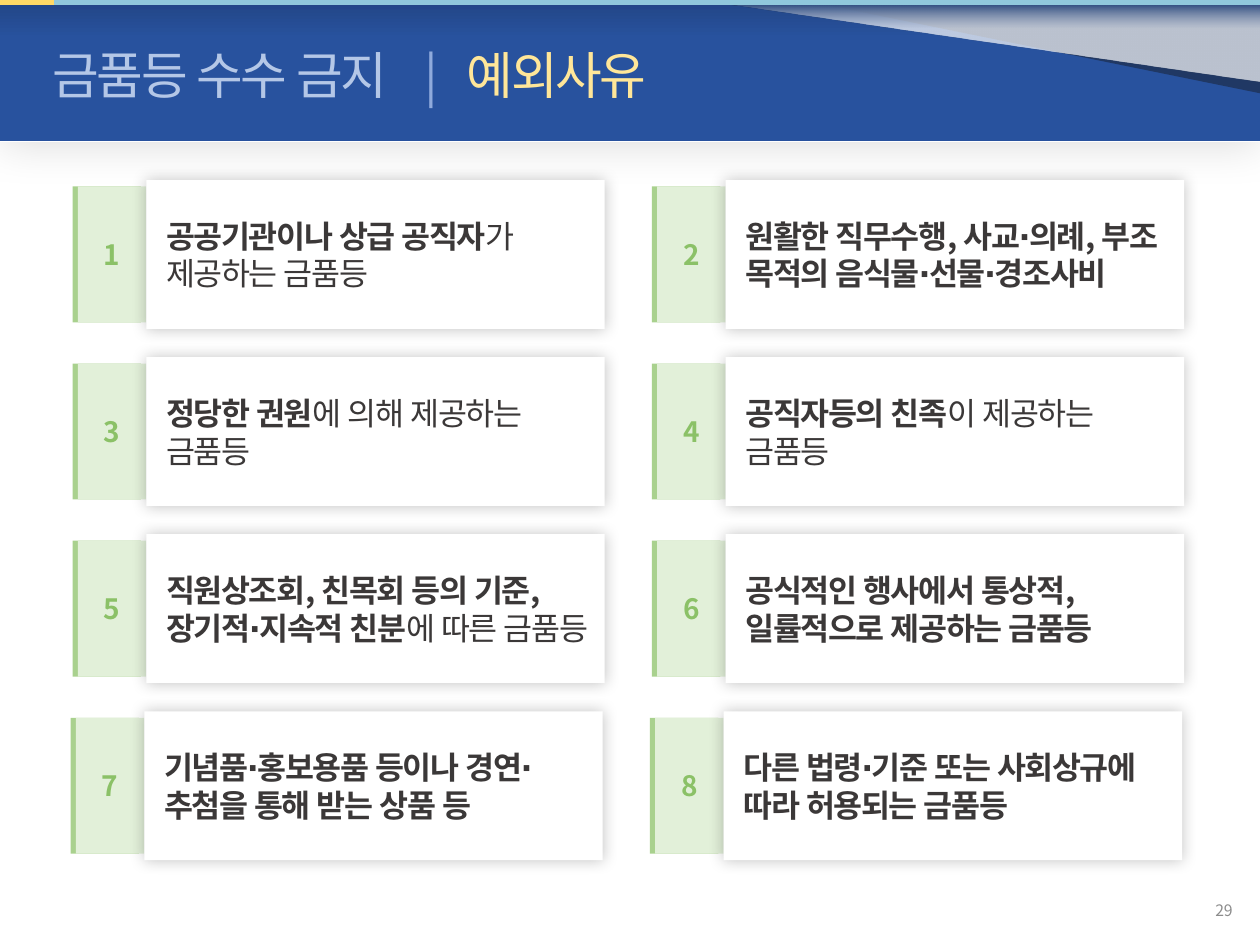
from lxml.etree import SubElement
from pptx import Presentation
from pptx.dml.color import RGBColor
from pptx.enum.shapes import MSO_CONNECTOR, MSO_SHAPE
from pptx.enum.text import MSO_ANCHOR, MSO_AUTO_SIZE, PP_ALIGN
from pptx.oxml.ns import qn
from pptx.util import Cm, Pt

# Content: each reason is a list of (text, bold) runs; \v is a line break
TITLE = [("금품등 수수 금지", "title"), ("\t|", "divider"), ("\t예외사유", "accent")]
REASONS = [
    [("공공기관이나 상급 공직자", True), ("가\v제공하는 금품등", False)],
    [("원활한 직무수행, 사교∙의례, 부조 목적의 음식물∙선물∙경조사비", True)],
    [("정당한 권원", True), ("에 의해 제공하는\v금품등", False)],
    [("공직자등의 친족", True), ("이 제공하는\v금품등", False)],
    [("직원상조회, 친목회 등의 기준, 장기적∙지속적 친분", True), ("에 따른 금품등", False)],
    [("공식적인 행사에서 통상적, 일률적으로 제공하는 금품등", True)],
    [("기념품∙홍보용품 등이나 경연∙추첨을 통해 받는 상품 등", True)],
    [("다른 법령∙기준 또는 사회상규에 따라 허용되는 금품등", True)],
]
PAGE = "29"

FONT = "Noto Sans CJK KR"
COLORS = {
    "white": "FFFFFF", "black": "000000", "text": "3B3838", "page": "8C8C8C",
    "tag": "E2F0D9", "tag_edge": "A9D18E", "number": "8BC167",
    "band_top": "224585", "band": "28529E", "fold": "203864", "fold_edge": "27457B",
    "strip": "90C8DC", "strip_start": "FFD966",
    "title": "B4C7E7", "divider": "8FAADC", "accent": "FFE699",
}
W, H = 25.4, 19.05
COLS = 2
LEFT, TOP = 1.57, 3.63               # first tag's left, first card's top
COL_STEP, ROW_STEP = 11.68, 3.57
TAG_W, TAG_H = 1.38, 2.74
CARD_W, CARD_H = 9.24, 3.0
LAST_ROW_SHIFT = -0.04


def rgb(name):
    return RGBColor.from_string(COLORS[name])


def add_run(p, text, size, color, bold=False, spacing=0):
    r = p.add_run()
    r.text = text
    f = r.font
    f.size, f.bold, f.name = Pt(size), bold, FONT
    f.color.rgb = rgb(color)
    rPr = r._r.get_or_add_rPr()
    rPr.set("lang", "ko-KR")
    if spacing:
        rPr.set("spc", str(round(spacing * 100)))
    SubElement(rPr, qn("a:ea")).set("typeface", FONT)


def add_box(s, x, y, w, h, fill=None, kind=MSO_SHAPE.RECTANGLE):
    sp = s.shapes.add_shape(kind, Cm(x), Cm(y), Cm(w), Cm(h))
    sp.shadow.inherit = False
    sp.line.fill.background()
    if fill:
        sp.fill.solid()
        sp.fill.fore_color.rgb = rgb(fill)
    return sp


def set_gradient(sp, *stops):
    """Fill from top to bottom with two (position, colour, alpha) stops."""
    sp.fill.gradient()
    sp.fill.gradient_angle = 270
    for stop, (pos, color, alpha) in zip(sp.fill.gradient_stops, stops):
        stop.position = pos
        stop.color.rgb = rgb(color)
        if alpha < 100:
            clr = stop._gs.find(qn("a:srgbClr"))
            SubElement(clr, qn("a:alpha")).set("val", str(alpha * 1000))


def set_shadow(sp, color, alpha, blur, dist, angle):
    effects = sp._element.spPr.find(qn("a:effectLst"))
    shadow = SubElement(effects, qn("a:outerShdw"), blurRad=str(Pt(blur)),
                        dist=str(Pt(dist)), dir=str(angle * 60000),
                        algn="ctr", rotWithShape="0")
    clr = SubElement(shadow, qn("a:srgbClr"), val=COLORS[color])
    SubElement(clr, qn("a:alpha")).set("val", str(alpha * 1000))


def set_frame(sp, left, right, align):
    tf = sp.text_frame
    tf.word_wrap = True
    tf.vertical_anchor = MSO_ANCHOR.MIDDLE
    tf.margin_left, tf.margin_right = Cm(left), Cm(right)
    p = tf.paragraphs[0]
    p.alignment = align
    return p


def add_header(s):
    band = add_box(s, 0, 0, W, 2.84)
    set_gradient(band, (0, "band_top", 100), (0.27, "band", 100))
    set_shadow(band, "black", 13, 25, 3, 90)

    # Title, raised above the band
    sp = s.shapes.title
    sp.left, sp.top, sp.width, sp.height = Cm(0.81), Cm(0.76), Cm(22.68), Cm(1.5)
    s.shapes._spTree.append(sp._element)
    tf = sp.text_frame
    tf.auto_size = MSO_AUTO_SIZE.NONE
    tf.vertical_anchor = MSO_ANCHOR.TOP
    p = tf.paragraphs[0]
    p.alignment = PP_ALIGN.LEFT
    tabs = SubElement(p._p.get_or_add_pPr(), qn("a:tabLst"))
    for pos in (7.5, 8.35):
        SubElement(tabs, qn("a:tab"), pos=str(Cm(pos)), algn="l")
    for text, color in TITLE:
        add_run(p, text, 29, color, spacing=-1.5)

    # Folded corner
    folds = [add_box(s, W - w, 0.08, w, h, "fold", MSO_SHAPE.RIGHT_TRIANGLE)
             for w, h in ((8.84, 1.8), (10.85, 1.57))]
    for sp in folds:
        sp.rotation = 180
    set_gradient(folds[1], (0.68, "white", 69), (1, "fold_edge", 100))

    # Lower rule and top strip
    rule = s.shapes.add_connector(MSO_CONNECTOR.STRAIGHT, 0, Cm(2.86), Cm(W), Cm(2.86))
    rule.line.color.rgb = rgb("white")
    rule.line.width = Pt(0.5)
    SubElement(rule._element.spPr, qn("a:effectLst"))
    add_box(s, 0, 0, W, 0.1, "strip")
    add_box(s, 0, 0, 1.09, 0.1, "strip_start")


def add_tag(s, x, y, number):
    sp = add_box(s, x, y + (CARD_H - TAG_H) / 2, TAG_W, TAG_H, "tag")
    set_shadow(sp, "tag_edge", 100, 0, 3, 180)
    p = set_frame(sp, 0, 0, PP_ALIGN.CENTER)
    add_run(p, str(number), 16, "number", True, -0.8)


def add_card(s, x, y, runs):
    sp = add_box(s, x + TAG_W, y, CARD_W, CARD_H, "white")
    set_shadow(sp, "black", 24, 9, 0, 0)
    p = set_frame(sp, 0.4, 0.25, PP_ALIGN.LEFT)
    for text, bold in runs:
        for i, line in enumerate(text.split("\v")):
            if i:
                p.add_line_break()
            add_run(p, line, 18, "text", bold, -0.8)


def main():
    prs = Presentation()
    prs.slide_width, prs.slide_height = Cm(W), Cm(H)
    s = prs.slides.add_slide(prs.slide_layouts[5])
    add_header(s)

    # Grid of numbered reasons
    last_row = (len(REASONS) - 1) // COLS
    for i, runs in enumerate(REASONS):
        row, col = divmod(i, COLS)
        x = LEFT + col * COL_STEP + (LAST_ROW_SHIFT if row == last_row else 0)
        y = TOP + row * ROW_STEP
        add_tag(s, x, y, i + 1)
        add_card(s, x, y, runs)

    # Page number
    sp = s.shapes.add_textbox(Cm(19.38), Cm(17.83), Cm(5.72), Cm(1.02))
    add_run(set_frame(sp, 0.25, 0.25, PP_ALIGN.RIGHT), PAGE, 9, "page")
    prs.save("out.pptx")


if __name__ == "__main__":
    main()
